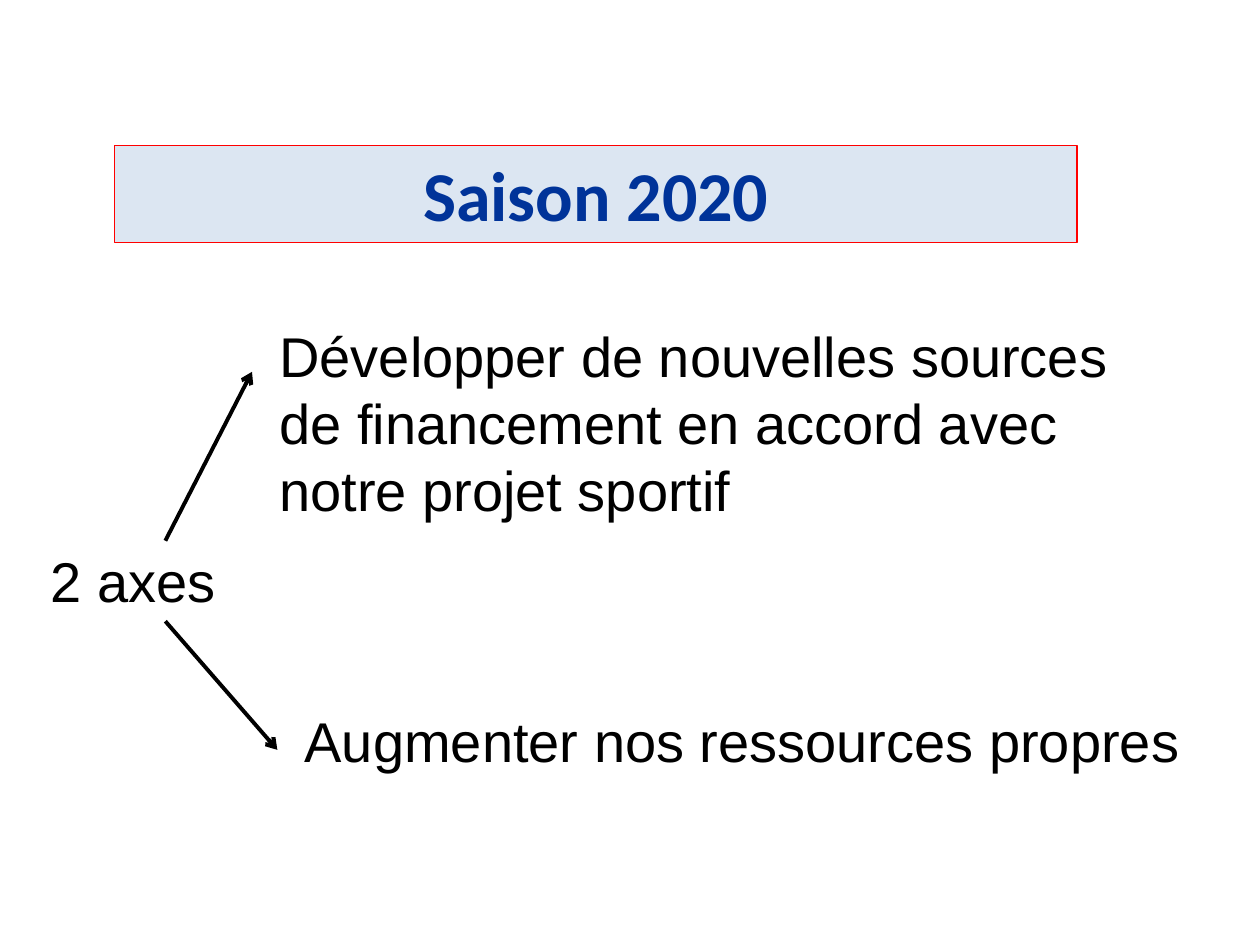
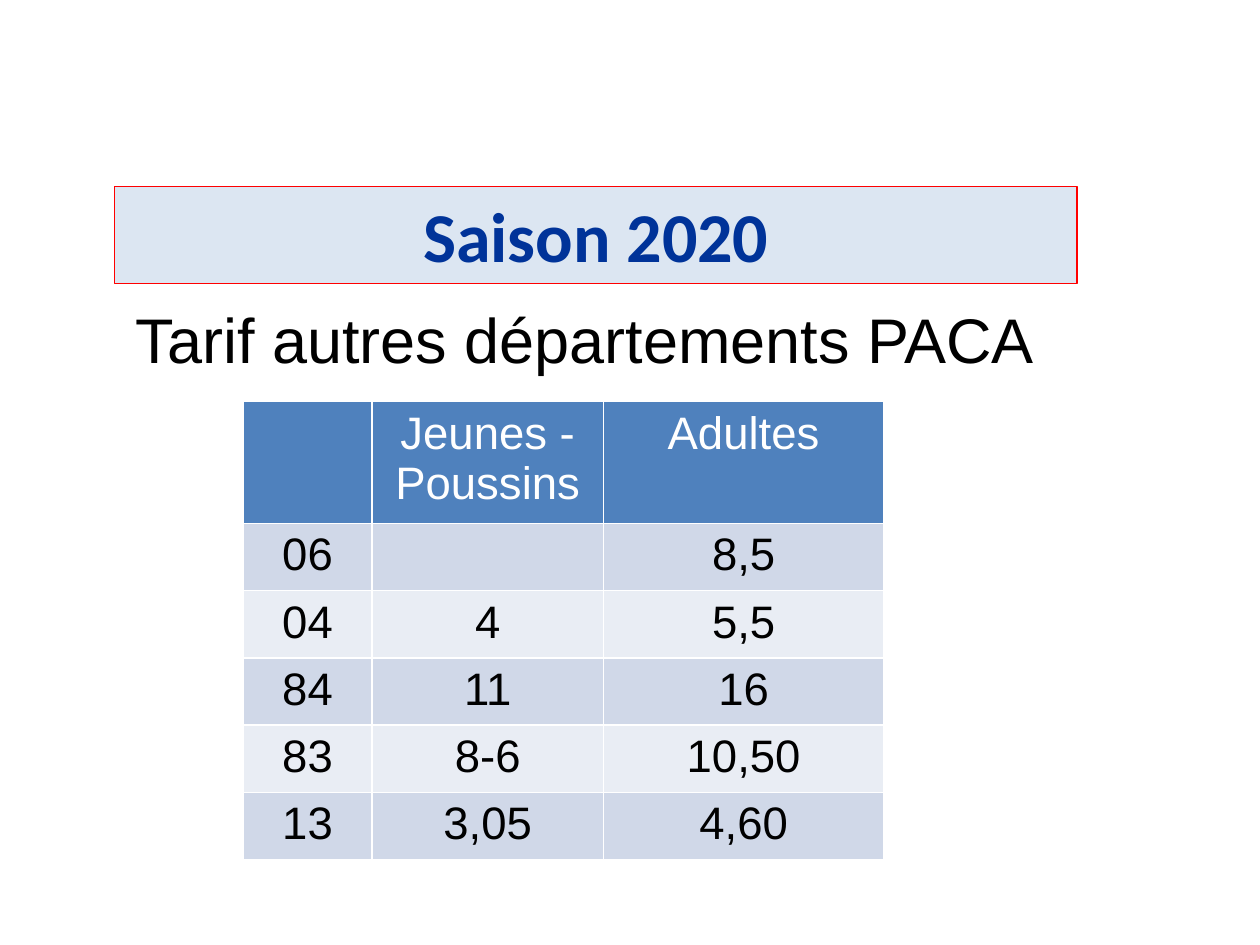
from pptx import Presentation
from pptx.dml.color import RGBColor
from pptx.enum.shapes import MSO_CONNECTOR
from pptx.enum.text import MSO_ANCHOR, MSO_AUTO_SIZE, PP_ALIGN
from pptx.oxml.ns import qn
from pptx.util import Pt
from lxml.etree import SubElement

COLORS = {
    "text": "000000",
    "title": "003399",
    "title_fill": "DCE6F2",
    "title_line": "FF0000",
    "header": "4F81BD",
    "band_dark": "D0D8E8",
    "band_light": "E9EDF4",
    "white": "FFFFFF",
}
BODY_FONT, TITLE_FONT = "Arial", "Calibri"
TITLE_ONLY = 5


def rgb(name):
    return RGBColor.from_string(COLORS[name])


class Deck:
    """Holds the shared style and the current slide."""

    def __init__(self):
        self.prs = Presentation()
        self.prs.slide_width, self.prs.slide_height = Pt(720), Pt(540)
        self.s = None

    def style(self, p, size, color="text", font=BODY_FONT, bold=False, align=PP_ALIGN.LEFT):
        p.alignment = align
        for r in p.runs:
            r.font.name, r.font.size, r.font.bold = font, Pt(size), bold
            r.font.color.rgb = rgb(color)

    def slide(self, title, top):
        """Add a slide with the framed title band."""
        self.s = self.prs.slides.add_slide(self.prs.slide_layouts[TITLE_ONLY])
        sp = self.s.shapes.title
        sp.left, sp.top, sp.width, sp.height = Pt(65.5), Pt(top), Pt(550), Pt(55.5)
        sp.fill.solid()
        sp.fill.fore_color.rgb = rgb("title_fill")
        sp.line.color.rgb = rgb("title_line")
        sp.line.width = Pt(0.75)
        tf = sp.text_frame
        tf.text = title
        tf.auto_size = MSO_AUTO_SIZE.NONE
        tf.vertical_anchor = MSO_ANCHOR.MIDDLE
        self.style(tf.paragraphs[0], 40, "title", TITLE_FONT, True, PP_ALIGN.CENTER)

    def text(self, text, left, top, width, height, size=32):
        sp = self.s.shapes.add_textbox(Pt(left), Pt(top), Pt(width), Pt(height))
        tf = sp.text_frame
        tf.word_wrap = True
        tf.text = text
        self.style(tf.paragraphs[0], size)

    def arrow(self, x1, y1, x2, y2):
        sp = self.s.shapes.add_connector(
            MSO_CONNECTOR.STRAIGHT, Pt(x1), Pt(y1), Pt(x2), Pt(y2))
        sp.line.color.rgb = rgb("text")
        sp.line.width = Pt(2.25)
        SubElement(sp.line._get_or_add_ln(), qn("a:tailEnd"), type="arrow")
        SubElement(sp._element.spPr, qn("a:effectLst"))

    def borders(self, cell):
        """Draw thin white lines on the four sides of a cell."""
        tcPr = cell._tc.get_or_add_tcPr()
        for i, side in enumerate(("lnL", "lnR", "lnT", "lnB")):
            ln = tcPr.makeelement(qn(f"a:{side}"), {"w": str(Pt(1))})
            fill = SubElement(ln, qn("a:solidFill"))
            SubElement(fill, qn("a:srgbClr"), val=COLORS["white"])
            tcPr.insert(i, ln)

    def table(self, rows, left, top, col_widths, header_height, row_height, size):
        heights = [header_height] + [row_height] * (len(rows) - 1)
        table = self.s.shapes.add_table(
            len(rows), len(col_widths), Pt(left), Pt(top),
            Pt(sum(col_widths)), Pt(sum(heights))).table
        for col, width in zip(table.columns, col_widths):
            col.width = Pt(width)
        for i, (row, values) in enumerate(zip(table.rows, rows)):
            row.height = Pt(heights[i])
            fill = "header" if i == 0 else "band_dark" if i % 2 else "band_light"
            for cell, value in zip(row.cells, values):
                cell.text = value
                cell.fill.solid()
                cell.fill.fore_color.rgb = rgb(fill)
                self.borders(cell)
                self.style(cell.text_frame.paragraphs[0], size,
                           "text" if i else "white", align=PP_ALIGN.CENTER)


def main():
    deck = Deck()

    # Two lines of action
    deck.slide("Saison 2020", top=83)
    deck.text("2 axes", 22, 309, 145.5, 46)
    deck.text("Augmenter nos ressources propres", 167, 400, 521.5, 46)
    deck.text("Développer de nouvelles sources de financement en accord avec "
              "notre projet sportif", 152.5, 180, 527, 124)
    deck.arrow(94.5, 309, 144, 212.5)
    deck.arrow(94.5, 355, 158.5, 428.5)

    # Rates in the other departments
    deck.slide("Saison 2020", top=106.5)
    deck.text("Tarif autres départements PACA", 70.5, 168, 572.5, 51, size=36)
    rates = [
        ("", "Jeunes - Poussins", "Adultes"),
        ("06", "", "8,5"),
        ("04", "4", "5,5"),
        ("84", "11", "16"),
        ("83", "8-6", "10,50"),
        ("13", "3,05", "4,60"),
    ]
    deck.table(rates, 139, 229.5, (73.5, 132.5, 160),
               header_height=69.5, row_height=38.4, size=26)

    deck.prs.save("out.pptx")


if __name__ == "__main__":
    main()
